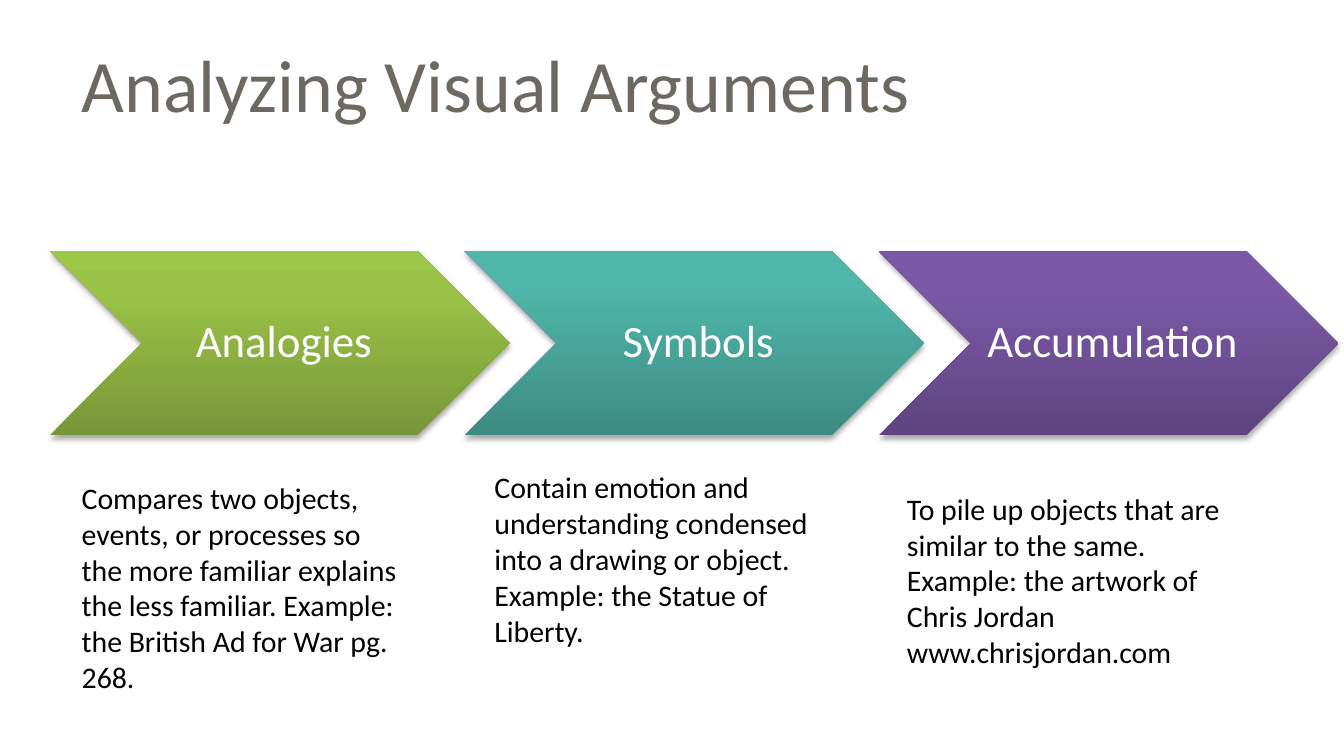
from copy import deepcopy
from dataclasses import dataclass

from lxml.etree import SubElement
from pptx import Presentation
from pptx.dml.color import RGBColor as Rgb
from pptx.enum.shapes import MSO_SHAPE as Shape
from pptx.enum.text import MSO_ANCHOR as Anchor, PP_ALIGN as Align
from pptx.oxml.ns import qn
from pptx.util import Pt

FONT = "Calibri"
COLORS = {
    "title": "6E6863",
    "body": "000000",
    "label": "FFFFFF",
    "shadow": "000000",
    "green": ("779737", "9BC348", "9DC746"),
    "teal": ("3D8B83", "50B5AA", "4EB8AC"),
    "purple": ("5F4480", "7B58A6", "7C57A8"),
}
STOPS = (0, 0.8, 1)

# Chevron row, in points
LEFT, TOP, WIDE, HIGH, STEP = 26.8, 134.6, 246.2, 98.6, 222
INSET = (7.2, 2.88, 2.88, 2.88)


@dataclass
class Box:
    left: float
    top: float
    width: float
    height: float


@dataclass
class Step:
    label: str
    color: str
    lines: tuple[str, ...]
    note: Box


STEPS = (
    Step("Analogies", "green",
         ("Compares two objects, events, or processes so the more familiar "
          "explains the less familiar. Example: the British Ad for War pg. 268.",),
         Box(36.7, 253.4, 187.2, 123.8)),
    Step("Symbols", "teal",
         ("Contain emotion and understanding condensed into a drawing or "
          "object. Example: the Statue of Liberty.",),
         Box(257.8, 247.7, 187.2, 104.4)),
    Step("Accumulation", "purple",
         ("To pile up objects that are similar to the same. Example: the "
          "artwork of Chris Jordan", "www.chrisjordan.com"),
         Box(478.8, 259.2, 203.8, 104.4)),
)


def place(box: Box) -> tuple:
    return Pt(box.left), Pt(box.top), Pt(box.width), Pt(box.height)


def write(slide, box: Box, lines: tuple[str, ...], size: float, color: str,
          anchor=Anchor.TOP, align=Align.LEFT, inset=(7.2, 3.6, 7.2, 3.6),
          space: float = 1) -> None:
    frame = slide.shapes.add_textbox(*place(box)).text_frame
    frame.word_wrap = True
    frame.vertical_anchor = anchor
    (frame.margin_left, frame.margin_top,
     frame.margin_right, frame.margin_bottom) = map(Pt, inset)
    for i, line in enumerate(lines):
        para = frame.add_paragraph() if i else frame.paragraphs[0]
        para.alignment = align
        para.line_spacing = space
        run = para.add_run()
        run.text = line
        run.font.name = FONT
        run.font.size = Pt(size)
        run.font.color.rgb = Rgb.from_string(COLORS[color])


def shade(shape) -> None:
    """Give the shape a soft shadow straight below it."""
    shape.shadow.inherit = False
    effect = shape._element.spPr.find(qn("a:effectLst"))
    outer = SubElement(effect, qn("a:outerShdw"), blurRad=str(Pt(3.1)),
                       dist=str(Pt(1.8)), dir="5400000", rotWithShape="0")
    tint = SubElement(outer, qn("a:srgbClr"), val=COLORS["shadow"])
    SubElement(tint, qn("a:alpha"), val="35000")


def chevron(slide, box: Box, color: str) -> None:
    shape = slide.shapes.add_shape(Shape.CHEVRON, *place(box))
    fill = shape.fill
    fill.gradient()
    fill.gradient_angle = 90
    # The default gradient has two stops; add the third
    group = shape._element.spPr.find(".//" + qn("a:gsLst"))
    group.append(deepcopy(group[-1]))
    for stop, spot, tint in zip(fill.gradient_stops, STOPS, COLORS[color]):
        stop.position = spot
        stop.color.rgb = Rgb.from_string(tint)
    shape.line.fill.background()
    shade(shape)


def main() -> None:
    deck = Presentation()
    deck.slide_width, deck.slide_height = Pt(720), Pt(405)
    slide = deck.slides.add_slide(deck.slide_layouts[6])

    # Title
    write(slide, Box(36.7, 11.5, 481.7, 66.2), ("Analyzing Visual Arguments",),
          39.6, "title", Anchor.MIDDLE)

    # Chevrons with labels; each label fits between notch and point
    for i, step in enumerate(STEPS):
        left = LEFT + i * STEP
        chevron(slide, Box(left, TOP, WIDE, HIGH), step.color)
        write(slide, Box(left + HIGH / 2, TOP, WIDE - HIGH, HIGH),
              (step.label,), 24, "label", Anchor.MIDDLE, Align.CENTER, INSET, 0.9)

    # Notes below
    for step in STEPS:
        write(slide, step.note, step.lines, 16, "body")

    deck.save("out.pptx")


if __name__ == "__main__":
    main()
